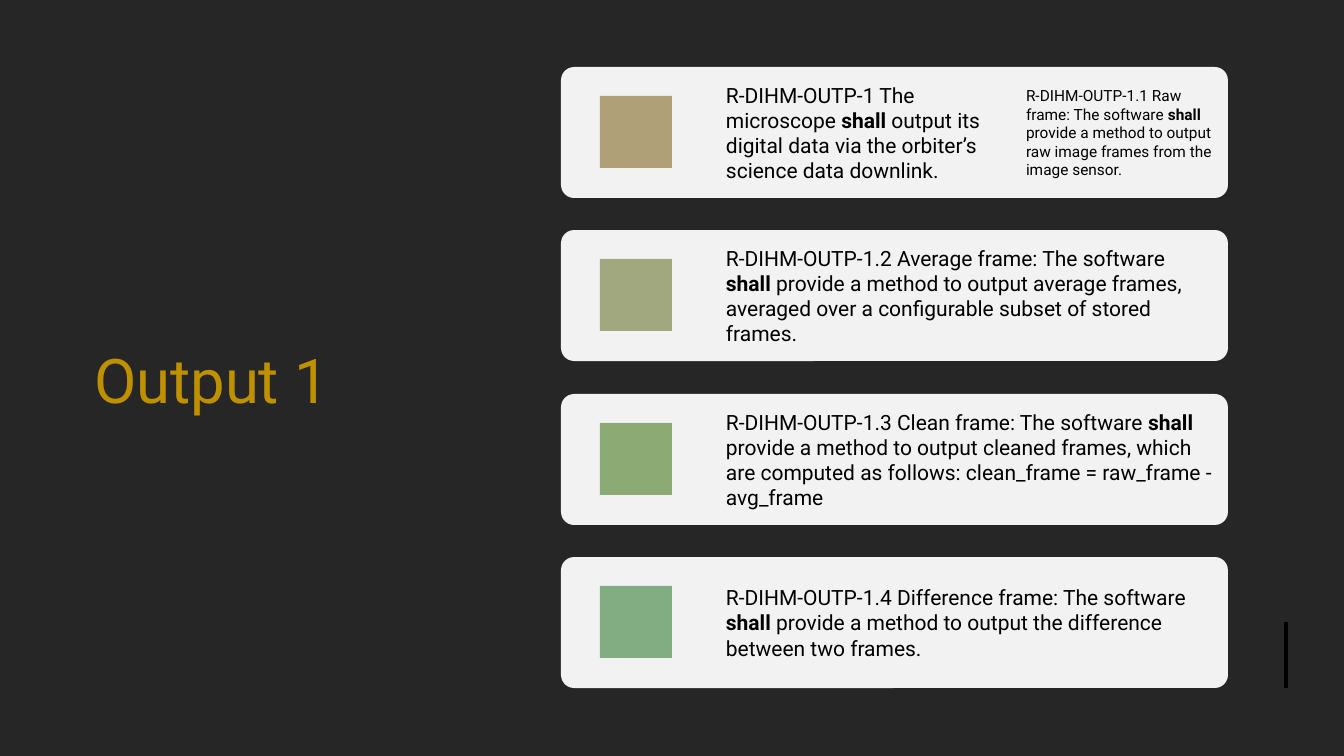
from lxml import etree
from pptx import Presentation
from pptx.dml.color import RGBColor
from pptx.enum.shapes import MSO_CONNECTOR, MSO_SHAPE
from pptx.enum.text import MSO_ANCHOR, PP_ALIGN
from pptx.oxml.ns import qn
from pptx.util import Pt

RECTANGLE, ROUNDED = MSO_SHAPE.RECTANGLE, MSO_SHAPE.ROUNDED_RECTANGLE
STRAIGHT = MSO_CONNECTOR.STRAIGHT
MIDDLE, LEFT = MSO_ANCHOR.MIDDLE, PP_ALIGN.LEFT

BACKGROUND = RGBColor(0x26, 0x26, 0x26)
GOLD = RGBColor(0xBF, 0x90, 0x00)
CARD = RGBColor(0xF2, 0xF2, 0xF2)
BLACK = RGBColor(0x00, 0x00, 0x00)
SAND = RGBColor(0xAF, 0xA0, 0x77)
OLIVE = RGBColor(0xA1, 0xA7, 0x7E)
GREEN = RGBColor(0x8C, 0xAB, 0x74)
MINT = RGBColor(0x82, 0xAC, 0x81)

FONT = "Roboto"
PX = 914400 / 100.8
CARD_LEFT, CARD_TOP, CARD_WIDTH, CARD_HEIGHT = 561, 67, 667, 131
CARDS_BOTTOM = 688
SWATCH_LEFT, SWATCH_SIZE = 600, 72
TEXT_INSET = 14

# Each card: swatch colour, then texts as (left, width, size, before "shall", after it)
CARDS = [
    (SAND, [
        (712, 300, 15, "R-DIHM-OUTP-1 The microscope ",
         " output its digital data via the orbiter’s science data downlink."),
        (1012, 216, 11, "R-DIHM-OUTP-1.1 Raw frame: The software ",
         " provide a method to output raw image frames from the image sensor."),
    ]),
    (OLIVE, [
        (712, 516, 15, "R-DIHM-OUTP-1.2 Average frame: The software ",
         " provide a method to output average frames, averaged over a "
         "configurable subset of stored frames."),
    ]),
    (GREEN, [
        (712, 516, 15, "R-DIHM-OUTP-1.3 Clean frame: The software ",
         " provide a method to output cleaned frames, which are computed as "
         "follows: clean_frame = raw_frame - avg_frame"),
    ]),
    (MINT, [
        (712, 516, 15, "R-DIHM-OUTP-1.4 Difference frame: The software ",
         " provide a method to output the difference between two frames."),
    ]),
]


def px(*lengths):
    return [round(length * PX) for length in lengths]


def add_block(kind, color, *frame):
    block = page.shapes.add_shape(kind, *px(*frame))
    block.shadow.inherit = False
    block.fill.solid()
    block.fill.fore_color.rgb = color
    block.line.fill.background()
    return block


# Slide and background
deck = Presentation()
deck.slide_width, deck.slide_height = px(1344, 756)
page = deck.slides.add_slide(deck.slide_layouts.get_by_name("Title Only"))
page.background.fill.solid()
page.background.fill.fore_color.rgb = BACKGROUND

# Title
title = page.shapes.title
title.left, title.top, title.width, title.height = px(84, 95, 380, 568)
title.text_frame.text = "Output 1"
title.text_frame.vertical_anchor = MIDDLE
para = title.text_frame.paragraphs[0]
para.alignment = LEFT
para.font.name, para.font.size, para.font.color.rgb = FONT, Pt(44), GOLD

# Accent line at the right edge
accent = page.shapes.add_connector(STRAIGHT, *px(1286, 622, 1286, 688))
accent.line.color.rgb = BLACK
accent.line.width = Pt(3)
etree.SubElement(accent._element.spPr, qn("a:effectLst"))

# Requirement cards, spread evenly from top to bottom
pitch = (CARDS_BOTTOM - CARD_HEIGHT - CARD_TOP) / (len(CARDS) - 1)
for index, (swatch_color, texts) in enumerate(CARDS):
    top = round(CARD_TOP + index * pitch)
    card = add_block(ROUNDED, CARD, CARD_LEFT, top, CARD_WIDTH, CARD_HEIGHT)
    card.adjustments[0] = 0.1
    swatch_top = top + (CARD_HEIGHT - SWATCH_SIZE) // 2
    add_block(RECTANGLE, swatch_color, SWATCH_LEFT, swatch_top, SWATCH_SIZE, SWATCH_SIZE)

    for left, width, size, before, after in texts:
        box = page.shapes.add_textbox(*px(left, top, width, CARD_HEIGHT))
        frame = box.text_frame
        frame.word_wrap = True
        frame.vertical_anchor = MIDDLE
        for side in ("left", "top", "right", "bottom"):
            setattr(frame, f"margin_{side}", px(TEXT_INSET)[0])
        para = frame.paragraphs[0]
        for words, bold in ((before, False), ("shall", True), (after, False)):
            span = para.add_run()
            span.text = words
            span.font.color.rgb = BLACK
            styles = {"name": FONT, "size": Pt(size), "bold": bold}
            for name, value in styles.items():
                setattr(span.font, name, value)

deck.save("out.pptx")
